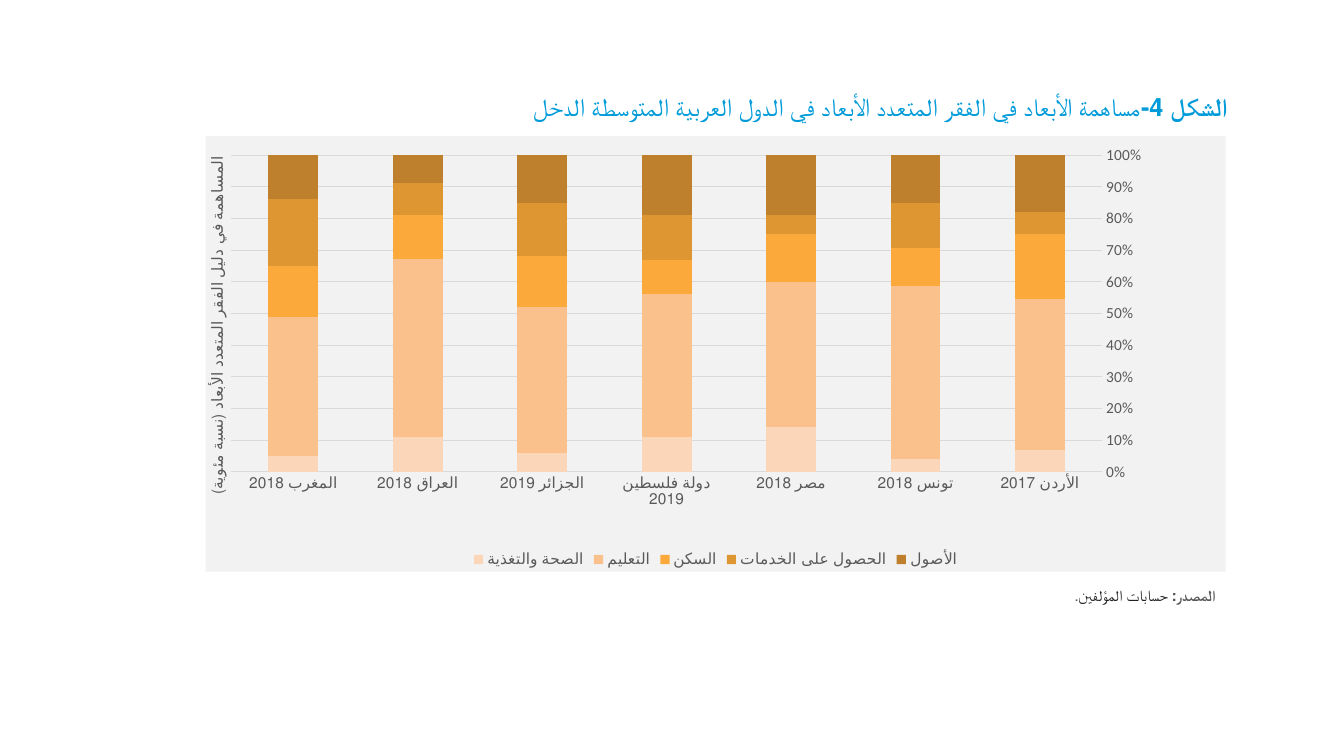
import pptx
import pptx.chart.data
import pptx.dml.color
import pptx.enum.chart
import pptx.enum.text
import pptx.oxml
import pptx.oxml.ns
import pptx.util

WIDTH, HEIGHT = pptx.util.Inches(13.33), pptx.util.Inches(7.5)
GREY, GRID = "595959", "D9D9D9"
COUNTRIES = ["الأردن 2017", "تونس 2018", "مصر 2018", "دولة فلسطين 2019",
             "الجزائر 2019", "العراق 2018", "المغرب 2018"]
DIMENSIONS = [
    ("الصحة والتغذية", "FCD6B9", [7, 4, 14, 11, 6, 11, 5]),
    ("التعليم", "FBC18D", [48, 54, 46, 45, 46, 57, 44]),
    ("السكن", "FAA93A", [21, 12, 15, 11, 16, 14, 16]),
    ("الحصول على الخدمات", "DE9633", [7, 14, 6, 14, 17, 10, 21]),
    ("الأصول", "BE802C", [18, 15, 19, 19, 15, 9, 14]),
]


def color(hex_value):
    return pptx.dml.color.RGBColor.from_string(hex_value)


def apply(target, values):
    for name, value in values.items():
        setattr(target, name, value)


def style_font(font, name, size, hex_value, bold=False):
    apply(font, {"name": name, "size": pptx.util.Pt(size), "bold": bold})
    font.color.rgb = color(hex_value)


def box(left, top, width, height):
    """Turn shares of the slide into left, top, width and height."""
    return (round(left * WIDTH), round(top * HEIGHT),
            round(width * WIDTH), round(height * HEIGHT))


def write_rtl(shape, runs, font_name, size, **paragraph_format):
    """Fill a shape with one right-to-left paragraph of (text, colour, bold) runs."""
    frame = shape.text_frame
    apply(frame, {"word_wrap": True,
                  "vertical_anchor": pptx.enum.text.MSO_ANCHOR.TOP,
                  "auto_size": pptx.enum.text.MSO_AUTO_SIZE.SHAPE_TO_FIT_TEXT})
    paragraph = frame.paragraphs[0]
    apply(paragraph, {"alignment": pptx.enum.text.PP_ALIGN.RIGHT, **paragraph_format})
    paragraph._p.get_or_add_pPr().set("rtl", "1")
    for text, hex_value, bold in runs:
        run = paragraph.add_run()
        run.text = text
        style_font(run.font, font_name, size, hex_value, bold)


def set_layout(parent, index, **shares):
    """Place a chart part by shares of the chart's size."""
    for old_layout in parent.findall(pptx.oxml.ns.qn("c:layout")):
        parent.remove(old_layout)
    target = '<c:layoutTarget val="inner"/>' if "w" in shares else ""
    modes = "".join(f'<c:{key}Mode val="edge"/>' for key in "xy")
    places = "".join(f'<c:{key} val="{share}"/>' for key, share in shares.items())
    parent.insert(index, pptx.oxml.parse_xml(
        f'<c:layout {pptx.oxml.ns.nsdecls("c")}><c:manualLayout>'
        f"{target}{modes}{places}</c:manualLayout></c:layout>"))


def fill_chart_area(chart, hex_value):
    text_properties = chart.element.find(pptx.oxml.ns.qn("c:txPr"))
    text_properties.addprevious(pptx.oxml.parse_xml(
        f'<c:spPr {pptx.oxml.ns.nsdecls("c", "a")}><a:solidFill>'
        f'<a:srgbClr val="{hex_value}"/></a:solidFill>'
        "<a:ln><a:noFill/></a:ln></c:spPr>"))


def style_line(line, hex_value):
    line.color.rgb = color(hex_value)
    line.width = pptx.util.Pt(0.75)


def style_axes(chart):
    no_tick = pptx.enum.chart.XL_TICK_MARK.NONE
    categories, values = chart.category_axis, chart.value_axis
    for axis in (categories, values):
        apply(axis, {"major_tick_mark": no_tick, "minor_tick_mark": no_tick})
        style_font(axis.tick_labels.font, "Calibri", 11, GREY)
    categories.reverse_order = True
    style_line(categories.format.line, GRID)
    apply(values, {"minimum_scale": 0, "maximum_scale": 1, "major_unit": 0.1})
    apply(values.tick_labels, {"number_format": "0%", "number_format_is_linked": False})
    values.format.line.fill.background()
    style_line(values.major_gridlines.format.line, GRID)


def add_axis_title(axis, text):
    frame = axis.axis_title.text_frame
    frame.text = text
    style_font(frame.paragraphs[0].runs[0].font, "Calibri", 11, GREY)
    frame._txBody.bodyPr.set("rot", "-5400000")
    frame._txBody.bodyPr.set("vert", "horz")
    set_layout(axis.axis_title._element, 1, x=0.0, y=0.04)


def add_stacked_chart(slide, place):
    data = pptx.chart.data.CategoryChartData()
    data.categories = COUNTRIES
    for name, _, shares in DIMENSIONS:
        data.add_series(name, shares)
    chart = slide.shapes.add_chart(
        pptx.enum.chart.XL_CHART_TYPE.COLUMN_STACKED_100, *place, data).chart
    style_font(chart.font, "Calibri", 11, GREY)
    fill_chart_area(chart, "F2F2F2")
    apply(chart, {"has_title": False, "has_legend": True})
    apply(chart.legend, {"position": pptx.enum.chart.XL_LEGEND_POSITION.BOTTOM,
                         "include_in_layout": False})
    style_font(chart.legend.font, "Calibri", 11, GREY)
    plot = chart.plots[0]
    apply(plot, {"gap_width": 150, "overlap": 100, "vary_by_categories": False})
    for series, (_, hex_value, _) in zip(plot.series, DIMENSIONS):
        series.format.fill.solid()
        series.format.fill.fore_color.rgb = color(hex_value)
    style_axes(chart)
    plot_area = chart.element.find(".//" + pptx.oxml.ns.qn("c:plotArea"))
    set_layout(plot_area, 0, x=0.025, y=0.044, w=0.854, h=0.727)
    return chart


def main():
    presentation = pptx.Presentation()
    apply(presentation, {"slide_width": WIDTH, "slide_height": HEIGHT})
    slide = presentation.slides.add_slide(presentation.slide_layouts[5])

    title = slide.shapes.title
    apply(title, dict(zip(("left", "top", "width", "height"),
                          box(0.049, 0.124, 0.872, 0.044))))
    write_rtl(title, [
        ("الشكل 4-", "009BD9", True),
        ("مساهمة الأبعاد في الفقر المتعدد الأبعاد في الدول العربية المتوسطة الدخل",
         "009BD9", False),
    ], "Cabin", 18, line_spacing=pptx.util.Pt(16))

    chart = add_stacked_chart(slide, box(0.153, 0.18, 0.759, 0.576))
    add_axis_title(chart.value_axis,
                   "المساهمة في دليل الفقر المتعدد الأبعاد (نسبة مئوية)")

    source = slide.shapes.add_textbox(*box(0.167, 0.769, 0.745, 0.039))
    write_rtl(source, [
        ("المصدر: ", "575756", True),
        ("حسابات المؤلفين", "202124", False),
        (".", "575756", False),
    ], "Roboto", 11, space_after=pptx.util.Pt(6))

    presentation.save("out.pptx")


if __name__ == "__main__":
    main()
